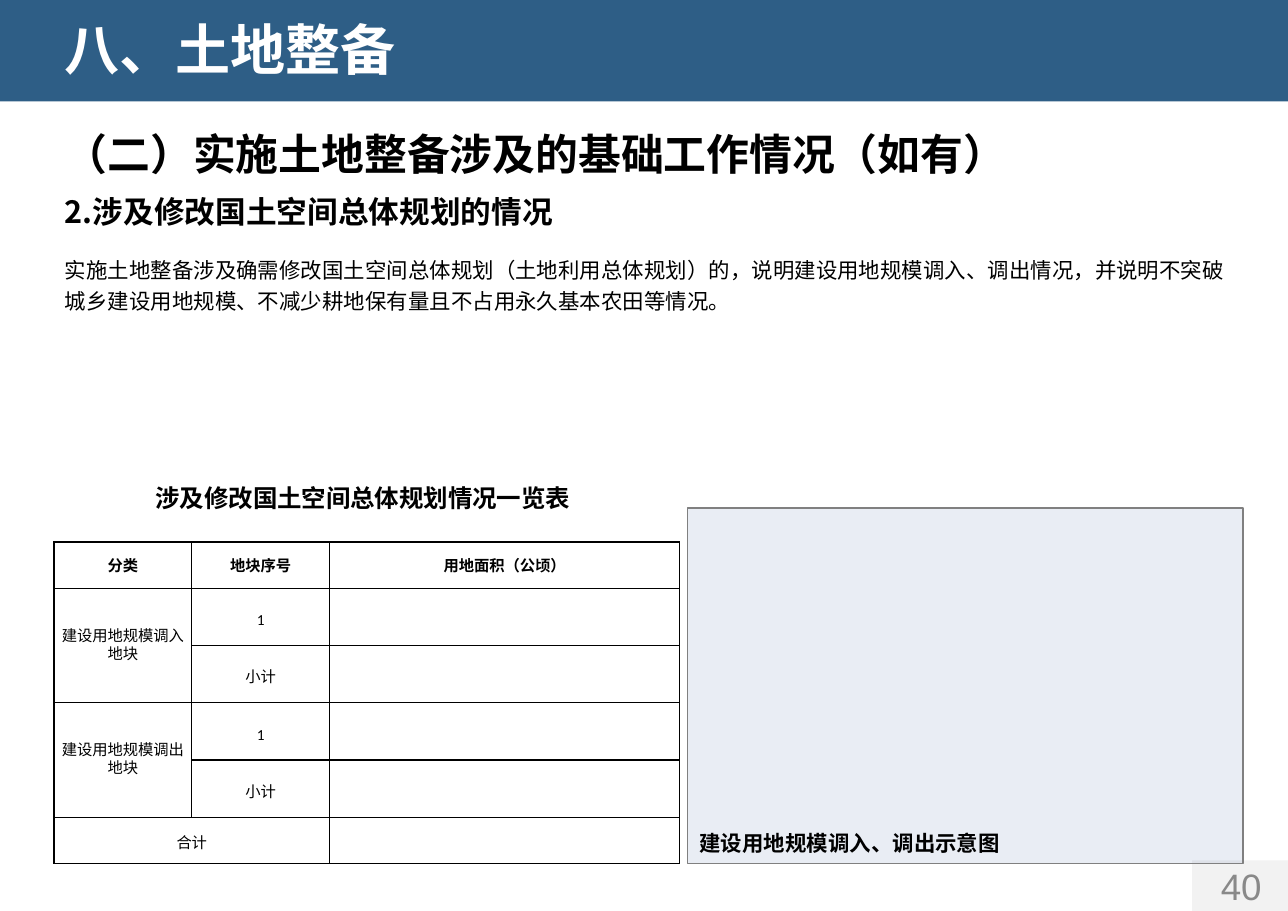
from dataclasses import dataclass, field
from typing import Any, Optional, Union

from lxml.etree import SubElement
from pptx import Presentation
from pptx.dml.color import RGBColor
from pptx.enum.shapes import MSO_SHAPE as Preset
from pptx.enum.text import MSO_ANCHOR as Anchor, MSO_AUTO_SIZE as AutoSize, PP_ALIGN as Align
from pptx.oxml import parse_xml
from pptx.oxml.ns import nsdecls, qn
from pptx.util import Inches, Pt

BLACK = RGBColor(0x00, 0x00, 0x00)
WHITE = RGBColor(0xFF, 0xFF, 0xFF)
GRAY = RGBColor(0x80, 0x80, 0x80)
NUMBER_GRAY = RGBColor(0x89, 0x89, 0x89)
BANNER_BLUE = RGBColor(0x2E, 0x5E, 0x86)
MAP_BLUE = RGBColor(0x2F, 0x55, 0x97)
CJK = "Noto Sans CJK SC"
Box = tuple[float, float, float, float]


@dataclass
class Panel:
    box: Box
    color: RGBColor
    opacity: int = 100
    outline: Optional[RGBColor] = None


@dataclass
class Label:
    text: str
    box: Box
    font: dict[str, Any]
    color: RGBColor = BLACK
    paragraph: dict[str, Any] = field(default_factory=dict)
    frame: dict[str, Any] = field(default_factory=dict)


@dataclass
class Entry:
    text: str
    row: int
    col: int
    face: str = "Calibri"
    bold: bool = False
    spacing: Union[float, Pt] = 1.0
    last: Optional[tuple[int, int]] = None


PANELS = [
    Panel((10.82, 7.81, 0.88, 0.48), GRAY, 10),
    Panel((0, 0, 11.69, 0.92), BANNER_BLUE),
    Panel((6.24, 4.61, 5.04, 3.23), MAP_BLUE, 10, GRAY),
]

MIDDLE = {"vertical_anchor": Anchor.MIDDLE}
LABELS = [
    Label("八、土地整备", (0.49, 0.09, 9.22, 0.71),
          {"name": "Arial", "size": Pt(36), "bold": True}, WHITE),
    Label("（二）实施土地整备涉及的基础工作情况（如有）", (0.49, 1.11, 9.22, 0.57),
          {"name": CJK, "size": Pt(28), "bold": True}, frame=MIDDLE),
    Label("2.涉及修改国土空间总体规划的情况", (0.49, 1.7, 8.17, 0.44),
          {"name": CJK, "size": Pt(20), "bold": True}, frame=MIDDLE),
    Label("实施土地整备涉及确需修改国土空间总体规划（土地利用总体规划）的，"
          "说明建设用地规模调入、调出情况，并说明不突破城乡建设用地规模、"
          "不减少耕地保有量且不占用永久基本农田等情况。", (0.49, 2.24, 10.78, 0.66),
          {"name": "Arial", "size": Pt(14)}, paragraph={"line_spacing": 1.2}),
    Label("涉及修改国土空间总体规划情况一览表", (0.49, 4.2, 5.61, 0.5),
          {"name": CJK, "size": Pt(16), "bold": True},
          paragraph={"alignment": Align.CENTER, "line_spacing": 1.5}),
    Label("建设用地规模调入、调出示意图", (6.25, 7.49, 5.39, 0.34),
          {"name": "Arial", "size": Pt(14), "bold": True}),
    Label("40", (10.84, 7.81, 0.85, 0.46), {"name": "Arial", "size": Pt(24)}, NUMBER_GRAY,
          {"alignment": Align.CENTER}, {**MIDDLE, "auto_size": AutoSize.NONE}),
]

COLUMNS = [1.25, 1.25, 3.18]
ROWS = [0.42, 0.52, 0.52, 0.52, 0.52, 0.42]
HEADERS = ["分类", "地块序号", "用地面积（公顷）"]
GROUPS = {1: "建设用地规模调入地块", 3: "建设用地规模调出地块"}


def set_all(target: Any, values: dict[str, Any]) -> None:
    for name, value in values.items():
        setattr(target, name, value)


def write(frame: Any, text: str, font: dict[str, Any], color: RGBColor,
          paragraph: dict[str, Any]) -> None:
    line = frame.paragraphs[0]
    set_all(line, paragraph)
    run = line.add_run()
    run.text = text
    set_all(run.font, font)
    run.font.color.rgb = color
    SubElement(run.font._element, qn("a:ea"), typeface=CJK)


def draw_panel(slide: Any, panel: Panel) -> None:
    shape = slide.shapes.add_shape(Preset.RECTANGLE, *map(Inches, panel.box))
    shape.shadow.inherit = False
    shape.fill.solid()
    shape.fill.fore_color.rgb = panel.color
    if panel.opacity < 100:
        tint = shape.fill._xPr.find(qn("a:solidFill"))[0]
        SubElement(tint, qn("a:alpha"), val=str(panel.opacity * 1000))
    if panel.outline is None:
        shape.line.fill.background()
    else:
        shape.line.color.rgb = panel.outline
        shape.line.width = Pt(1)


def draw_label(slide: Any, label: Label) -> None:
    frame = slide.shapes.add_textbox(*map(Inches, label.box)).text_frame
    set_all(frame, {"word_wrap": True, "auto_size": AutoSize.SHAPE_TO_FIT_TEXT, **label.frame})
    write(frame, label.text, label.font, label.color, label.paragraph)


def style_cell(cell: Any) -> None:
    set_all(cell, {"margin_left": Inches(0.07), "margin_right": Inches(0.07),
                   "margin_top": 0, "margin_bottom": 0, **MIDDLE})
    cell.fill.background()
    properties = cell._tc.get_or_add_tcPr()
    for index, side in enumerate("LRTB"):
        properties.insert(index, parse_xml(
            f'<a:ln{side} {nsdecls("a")} w="{Pt(1)}"><a:solidFill>'
            f'<a:srgbClr val="{BLACK}"/></a:solidFill></a:ln{side}>'))


def plan_entries() -> list[Entry]:
    entries = [Entry(text, 0, col, bold=True) for col, text in enumerate(HEADERS)]
    for row, group in GROUPS.items():
        entries += [
            Entry(group, row, 0, "Arial", spacing=Pt(12), last=(row + 1, 0)),
            Entry("1", row, 1, spacing=Pt(17)),
            Entry("小计", row + 1, 1, spacing=Pt(17)),
        ]
    return entries + [Entry("合计", 5, 0, spacing=Pt(17), last=(5, 1))]


def draw_table(slide: Any) -> None:
    size = (sum(COLUMNS), sum(ROWS))
    table = slide.shapes.add_table(len(ROWS), len(COLUMNS),
                                   *map(Inches, (0.49, 4.92, *size))).table
    set_all(table, {"first_row": False, "horz_banding": False})
    for column, width in zip(table.columns, COLUMNS):
        column.width = Inches(width)
    for row, height in zip(table.rows, ROWS):
        row.height = Inches(height)
    for cell in table.iter_cells():
        style_cell(cell)
    for entry in plan_entries():
        cell = table.cell(entry.row, entry.col)
        if entry.last:
            cell.merge(table.cell(*entry.last))
        write(cell.text_frame, entry.text,
              {"name": entry.face, "size": Pt(10), "bold": entry.bold}, BLACK,
              {"alignment": Align.CENTER, "line_spacing": entry.spacing})


def main() -> None:
    deck = Presentation()
    set_all(deck, {"slide_width": Inches(11.69), "slide_height": Inches(8.27)})
    slide = deck.slides.add_slide(deck.slide_layouts[6])

    # Banner, page number corner and map area
    for panel in PANELS:
        draw_panel(slide, panel)

    # Land parcel table
    draw_table(slide)

    # Headings, body text and captions
    for label in LABELS:
        draw_label(slide, label)

    deck.save("out.pptx")


if __name__ == "__main__":
    main()
